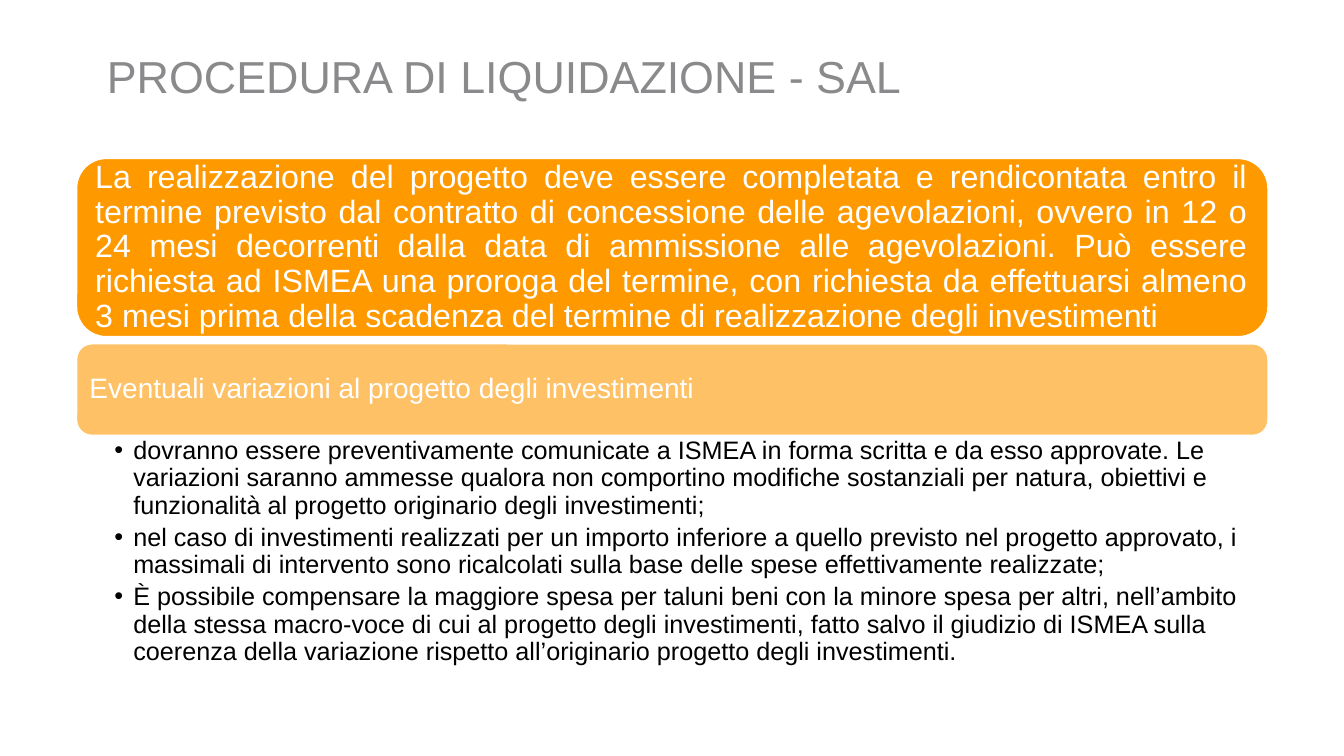
from dataclasses import dataclass

from lxml.etree import SubElement
from pptx import Presentation
from pptx.dml.color import RGBColor
from pptx.enum.shapes import MSO_SHAPE
from pptx.enum.text import MSO_ANCHOR, MSO_AUTO_SIZE, PP_ALIGN
from pptx.oxml.ns import qn
from pptx.util import Pt


@dataclass(frozen=True)
class Theme:
    font: str = "Arial"
    orange: RGBColor = RGBColor(0xFF, 0x99, 0x00)
    white: RGBColor = RGBColor(0xFF, 0xFF, 0xFF)
    black: RGBColor = RGBColor(0x00, 0x00, 0x00)
    grey: RGBColor = RGBColor(0x8A, 0x89, 0x8C)
    title_size: int = 32
    deadline_size: int = 23
    heading_size: int = 20
    rule_size: int = 18


THEME = Theme()

# Shared left edge and width of the bands and the list
LEFT, WIDTH = 54.7, 851

TITLE = "PROCEDURA DI LIQUIDAZIONE - SAL"
DEADLINE = (
    "La realizzazione del progetto deve essere completata e rendicontata entro il "
    "termine previsto dal contratto di concessione delle agevolazioni, ovvero in 12 o "
    "24 mesi decorrenti dalla data di ammissione alle agevolazioni. Può essere "
    "richiesta ad ISMEA una proroga del termine, con richiesta da effettuarsi almeno "
    "3 mesi prima della scadenza del termine di realizzazione degli investimenti"
)
VARIATIONS = "Eventuali variazioni al progetto degli investimenti"
RULES = [
    "dovranno essere preventivamente comunicate a ISMEA in forma scritta e da esso "
    "approvate. Le variazioni saranno ammesse qualora non comportino modifiche "
    "sostanziali per natura, obiettivi e funzionalità al progetto originario degli "
    "investimenti;",
    "nel caso di investimenti realizzati per un importo inferiore a quello previsto "
    "nel progetto approvato, i massimali di intervento sono ricalcolati sulla base "
    "delle spese effettivamente realizzate;",
    "È possibile compensare la maggiore spesa per taluni beni con la minore spesa per "
    "altri, nell’ambito della stessa macro-voce di cui al progetto degli investimenti, "
    "fatto salvo il giudizio di ISMEA sulla coerenza della variazione rispetto "
    "all’originario progetto degli investimenti.",
]


def place(item, left, top, width, height):
    item.left, item.top = Pt(left), Pt(top)
    item.width, item.height = Pt(width), Pt(height)


def set_frame(frame, anchor, left=0, top=0, right=0, bottom=0):
    frame.word_wrap = True
    frame.auto_size = MSO_AUTO_SIZE.NONE
    frame.vertical_anchor = anchor
    frame.margin_left, frame.margin_right = Pt(left), Pt(right)
    frame.margin_top, frame.margin_bottom = Pt(top), Pt(bottom)


def write(paragraph, text, size, color, align=PP_ALIGN.LEFT):
    paragraph.text = text
    paragraph.alignment = align
    paragraph.line_spacing = 0.9
    paragraph.space_before = Pt(0)
    for run in paragraph.runs:
        run.font.name = THEME.font
        run.font.size = Pt(size)
        run.font.color.rgb = color


def add_title(slide):
    title = slide.shapes.title
    place(title, 76.3, 38.2, 790.6, 39.6)
    set_frame(title.text_frame, MSO_ANCHOR.TOP, top=0.7)
    write(title.text_frame.paragraphs[0], TITLE, THEME.title_size, THEME.grey)


def add_band(slide, top, height, text, size, inset, align=PP_ALIGN.LEFT, opacity=100):
    band = slide.shapes.add_shape(
        MSO_SHAPE.ROUNDED_RECTANGLE, Pt(LEFT), Pt(top), Pt(WIDTH), Pt(height)
    )
    band.shadow.inherit = False
    band.fill.solid()
    band.fill.fore_color.rgb = THEME.orange
    band.line.color.rgb = THEME.white
    band.line.width = Pt(1)
    if opacity < 100:
        fill_color = band.fill._xPr.find(qn("a:solidFill"))[0]
        SubElement(fill_color, qn("a:alpha"), val=str(opacity * 1000))
    set_frame(band.text_frame, MSO_ANCHOR.MIDDLE, left=inset, right=inset)
    write(band.text_frame.paragraphs[0], text, size, THEME.white, align)


def add_rules(slide):
    rules = slide.placeholders[1]
    place(rules, LEFT, 311, WIDTH, 149.8)
    frame = rules.text_frame
    set_frame(frame, MSO_ANCHOR.TOP, left=27, top=1.8, right=10, bottom=1.8)
    for index, rule in enumerate(RULES):
        paragraph = frame.add_paragraph() if index else frame.paragraphs[0]
        paragraph.level = 1
        # Bullet with hanging indent
        properties = paragraph._p.get_or_add_pPr()
        properties.set("marL", str(Pt(13.5)))
        properties.set("indent", str(Pt(-13.5)))
        SubElement(properties, qn("a:buChar"), char="•")
        write(paragraph, rule, THEME.rule_size, THEME.black)
        paragraph.space_after = Pt(3.6)


def main():
    deck = Presentation()
    deck.slide_width, deck.slide_height = Pt(960), Pt(540)
    slide = deck.slides.add_slide(deck.slide_layouts[1])

    add_title(slide)
    # Deadline for completing the project
    add_band(slide, 113.2, 127.3, DEADLINE, THEME.deadline_size, 7.2, PP_ALIGN.JUSTIFY)
    # Rules on changes to the project
    add_band(slide, 245.6, 65.4, VARIATIONS, THEME.heading_size, 6, opacity=60)
    add_rules(slide)

    deck.save("out.pptx")


if __name__ == "__main__":
    main()
